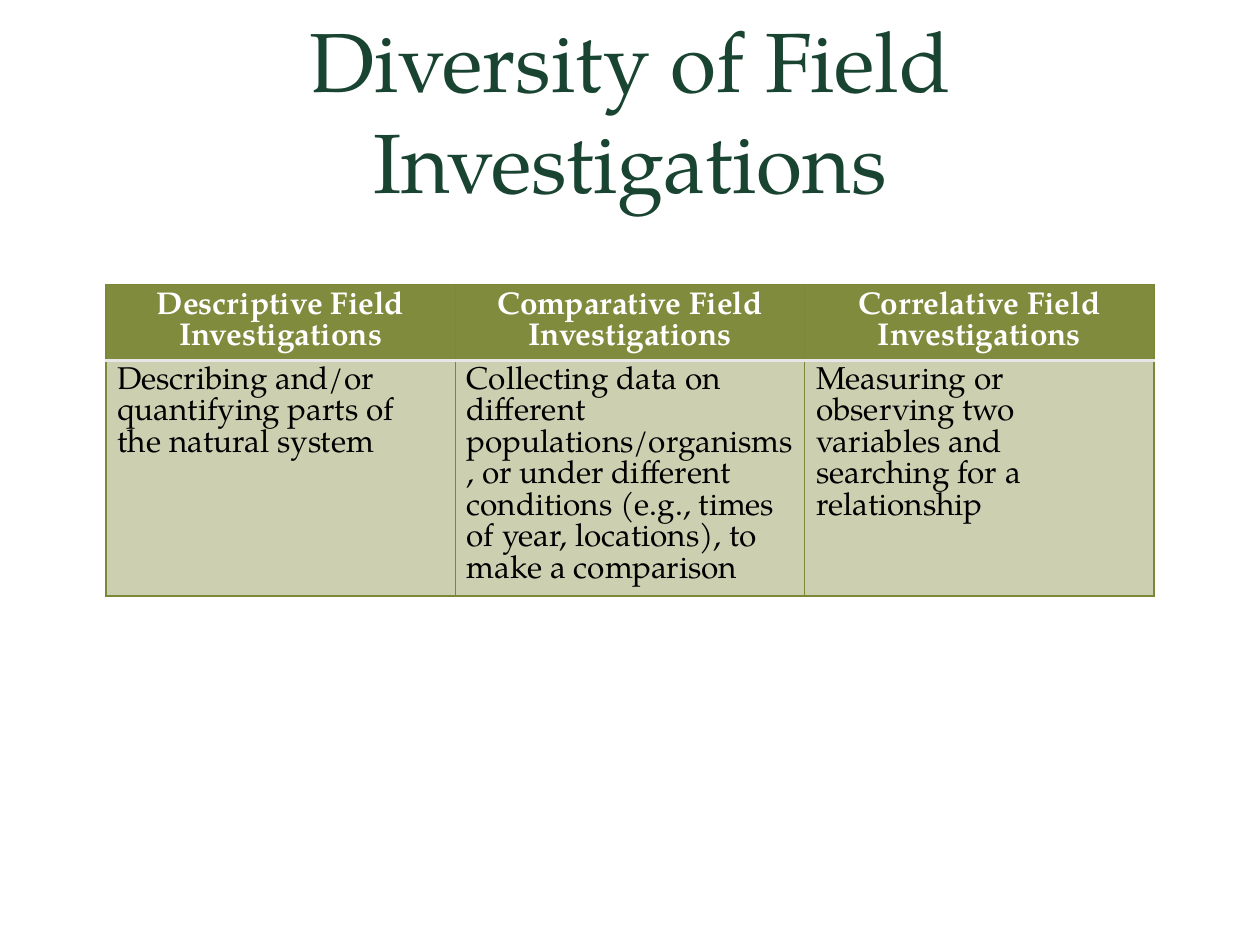
from lxml import etree
from pptx import Presentation
from pptx.dml.color import RGBColor as Rgb
from pptx.enum.text import MSO_ANCHOR as Anchor, PP_ALIGN as Align
from pptx.oxml.ns import qn
from pptx.util import Inches, Pt

FONT = "TeX Gyre Pagella"
COLORS = {
    "title": "194431",
    "olive": "818B3D",
    "border": "7D8738",
    "divider": "E7E7E7",
    "header_text": "FFFFFF",
    "body_text": "000000",
}
INVESTIGATIONS = [
    ("Descriptive Field Investigations",
     "Describing and/or quantifying parts of the natural system"),
    ("Comparative Field Investigations",
     "Collecting data on different populations/organisms, or under different "
     "conditions (e.g., times of year, locations), to make a comparison"),
    ("Correlative Field Investigations",
     "Measuring or observing two variables and searching for a relationship"),
]
ROW_HEIGHTS = [0.59, 1.87]


def style_paragraph(para, size, color, align, bold=False):
    para.alignment = align
    para.font.name = FONT
    para.font.size = Pt(size)
    para.font.bold = bold
    para.font.color.rgb = Rgb.from_string(COLORS[color])


def add_title(page, left, top, width, height):
    box = page.shapes.add_textbox(
        Inches(left), Inches(top), Inches(width), Inches(height))
    frame = box.text_frame
    frame.word_wrap = True
    frame.vertical_anchor = Anchor.MIDDLE
    frame.text = "Diversity of Field Investigations"
    style_paragraph(frame.paragraphs[0], 48, "title", Align.CENTER)


def set_borders(cell, edges):
    props = cell._tc.get_or_add_tcPr()
    for position, (edge, (color, width)) in enumerate(edges.items()):
        line = etree.Element(qn(f"a:{edge}"), w=str(Pt(width)))
        fill = etree.SubElement(line, qn("a:solidFill"))
        etree.SubElement(fill, qn("a:srgbClr"), val=COLORS[color])
        props.insert(position, line)


def fill_cell(cell, text, is_header):
    cell.margin_left = cell.margin_right = Inches(0.09)
    cell.margin_top = cell.margin_bottom = Inches(0.05)
    cell.text = text
    para = cell.text_frame.paragraphs[0]
    para.line_spacing = Pt(18)
    cell.fill.solid()
    cell.fill.fore_color.rgb = Rgb.from_string(COLORS["olive"])
    edges = dict.fromkeys(("lnL", "lnR", "lnT", "lnB"), ("border", 1))
    if is_header:
        style_paragraph(para, 18, "header_text", Align.CENTER, True)
        edges["lnB"] = ("divider", 2)
    else:
        style_paragraph(para, 18, "body_text", Align.LEFT)
        edges["lnT"] = ("divider", 2)
        shade = cell._tc.tcPr.find(f".//{qn('a:srgbClr')}")
        etree.SubElement(shade, qn("a:alpha"), val="40000")
    set_borders(cell, edges)


def add_investigation_table(page, left, top, width):
    table = page.shapes.add_table(
        len(ROW_HEIGHTS), len(INVESTIGATIONS), Inches(left), Inches(top),
        Inches(width), Inches(sum(ROW_HEIGHTS))).table
    for row, height in zip(table.rows, ROW_HEIGHTS):
        row.height = Inches(height)
    for column, texts in enumerate(INVESTIGATIONS):
        for row, text in enumerate(texts):
            fill_cell(table.cell(row, column), text, row == 0)


def main():
    deck = Presentation()
    deck.slide_width, deck.slide_height = Inches(10), Inches(7.5)
    page = deck.slides.add_slide(deck.slide_layouts[6])
    add_title(page, 0.84, 0.09, 8.32, 1.55)
    add_investigation_table(page, 0.84, 2.26, 8.32)
    deck.save("out.pptx")


if __name__ == "__main__":
    main()
